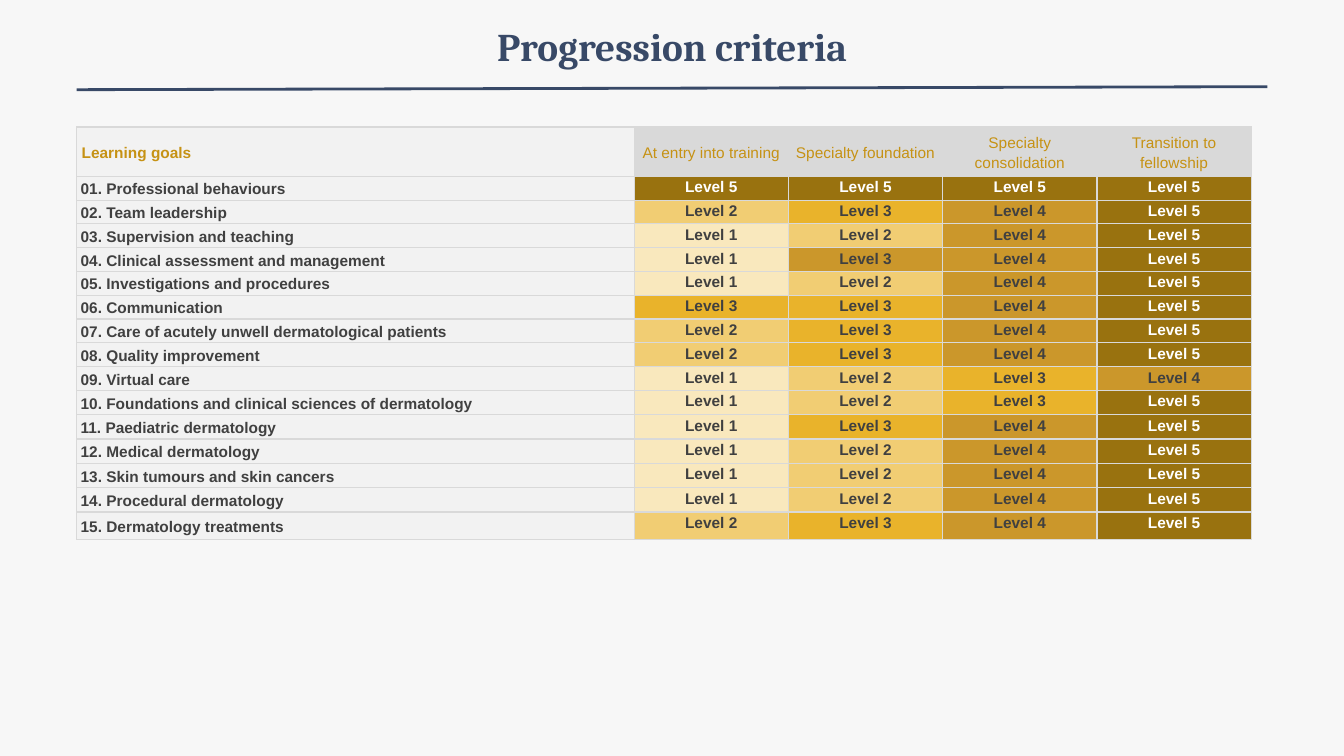
import pptx
import pptx.dml.color
import pptx.enum.shapes
import pptx.enum.text
import pptx.oxml
import pptx.oxml.ns
import pptx.util
from dataclasses import dataclass

Inches, Pt = pptx.util.Inches, pptx.util.Pt
RGB = pptx.dml.color.RGBColor.from_string
ALIGN = pptx.enum.text.PP_ALIGN
ANCHOR = pptx.enum.text.MSO_ANCHOR


@dataclass
class Theme:
    page: str = "F7F7F7"
    navy: str = "384967"
    gold: str = "C69214"
    ink: str = "404040"
    white: str = "FFFFFF"
    goal: str = "F2F2F2"
    rule: str = "D9D9D9"
    levels: tuple = ("F9E8BD", "F1CD73", "E9B32B", "CB972B", "99720F")
    title_font: str = "Cambria"
    body_font: str = "Arial"
    title_size: int = 28
    body_size: int = 11


theme = Theme()


def write(tf, text, font=theme.body_font, size=theme.body_size, color=theme.ink,
          bold=True, align=ALIGN.LEFT, spacing=1.15, after=0):
    p = tf.paragraphs[0]
    p.alignment, p.line_spacing = align, spacing
    p.space_before, p.space_after = Pt(0), Pt(after)
    r = p.add_run()
    r.text = text
    r.font.name, r.font.size, r.font.bold = font, Pt(size), bold
    r.font.color.rgb = RGB(color)


def style_cell(cell, fill, anchor, inset):
    cell.fill.solid()
    cell.fill.fore_color.rgb = RGB(fill)
    cell.vertical_anchor = anchor
    cell.margin_left = cell.margin_right = Inches(inset)
    cell.margin_top = cell.margin_bottom = 0
    tcPr = cell._tc.get_or_add_tcPr()
    for i, side in enumerate(("lnL", "lnR", "lnT", "lnB")):
        tcPr.insert(i, pptx.oxml.parse_xml(
            f'<a:{side} {pptx.oxml.ns.nsdecls("a")} w="{Pt(1)}"><a:solidFill>'
            f'<a:srgbClr val="{theme.rule}"/></a:solidFill></a:{side}>'))


stages = ["At entry into training", "Specialty foundation",
          "Specialty consolidation", "Transition to fellowship"]
goals = [
    ("Professional behaviours", (5, 5, 5, 5)),
    ("Team leadership", (2, 3, 4, 5)),
    ("Supervision and teaching", (1, 2, 4, 5)),
    ("Clinical assessment and management", (1, 3, 4, 5)),
    ("Investigations and procedures", (1, 2, 4, 5)),
    ("Communication", (3, 3, 4, 5)),
    ("Care of acutely unwell dermatological patients", (2, 3, 4, 5)),
    ("Quality improvement", (2, 3, 4, 5)),
    ("Virtual care", (1, 2, 3, 4)),
    ("Foundations and clinical sciences of dermatology", (1, 2, 3, 5)),
    ("Paediatric dermatology", (1, 3, 4, 5)),
    ("Medical dermatology", (1, 2, 4, 5)),
    ("Skin tumours and skin cancers", (1, 2, 4, 5)),
    ("Procedural dermatology", (1, 2, 4, 5)),
    ("Dermatology treatments", (2, 3, 4, 5)),
]
fill_overrides = {(4, 2): theme.levels[3]}

prs = pptx.Presentation()
prs.slide_width, prs.slide_height = Inches(13.33), Inches(7.5)
s = prs.slides.add_slide(prs.slide_layouts[5])
s.background.fill.solid()
s.background.fill.fore_color.rgb = RGB(theme.page)

left = Inches(0.76)
title = s.shapes.title
title.width, title.height = Inches(9), Inches(1.25)
title.left, title.top = (prs.slide_width - title.width) // 2, Inches(0.17)
tf = title.text_frame
tf.word_wrap = True
tf.auto_size = pptx.enum.text.MSO_AUTO_SIZE.NONE
tf.vertical_anchor = ANCHOR.TOP
write(tf, "Progression criteria", font=theme.title_font, size=theme.title_size,
      color=theme.navy, align=ALIGN.CENTER, spacing=1.0)

line = s.shapes.add_connector(pptx.enum.shapes.MSO_CONNECTOR.STRAIGHT,
                              left, Inches(0.89), prs.slide_width - left, Inches(0.86))
line.line.color.rgb = RGB(theme.navy)
line.line.width = Pt(2)
line._element.spPr.append(pptx.oxml.parse_xml(
    f'<a:effectLst {pptx.oxml.ns.nsdecls("a")}/>'))

col_widths = [Inches(5.53)] + [Inches(1.53)] * len(stages)
row_heights = [Inches(0.49)] + [Pt(17)] * 9 + [Pt(17.4)] * 5 + [Inches(0.27)]
table = s.shapes.add_table(len(row_heights), len(col_widths), left, Inches(1.26),
                           sum(col_widths), sum(row_heights)).table
table.horz_banding = False
for col, width in zip(table.columns, col_widths):
    col.width = width
for row, height in zip(table.rows, row_heights):
    row.height = height

for c, text in enumerate(["Learning goals"] + stages):
    cell = table.cell(0, c)
    style_cell(cell, theme.rule if c else theme.goal, ANCHOR.MIDDLE, 0.05)
    write(cell.text_frame, text, color=theme.gold, bold=c == 0,
          align=ALIGN.CENTER if c else ALIGN.LEFT)

for n, (goal, levels) in enumerate(goals, 1):
    cell = table.cell(n, 0)
    style_cell(cell, theme.goal, ANCHOR.MIDDLE, 0.04)
    write(cell.text_frame, f"{n:02d}. {goal}")
    for c, level in enumerate(levels, 1):
        cell = table.cell(n, c)
        fill = fill_overrides.get((n, c), theme.levels[level - 1])
        style_cell(cell, fill, ANCHOR.TOP, 0.03)
        write(cell.text_frame, f"Level {level}", align=ALIGN.CENTER,
              color=theme.white if level == 5 else theme.ink)

prs.save("out.pptx")
